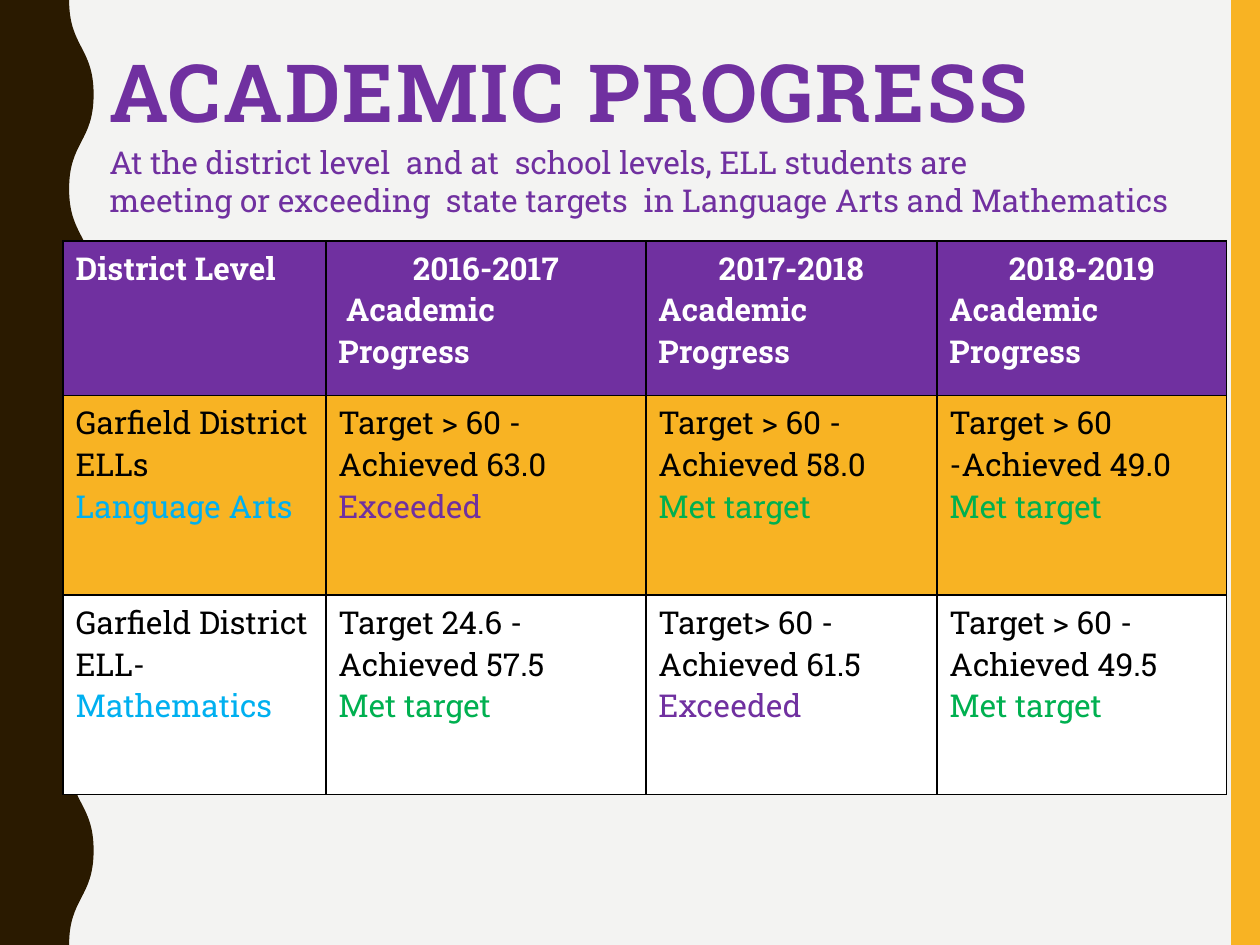
from lxml import etree
from pptx import Presentation
from pptx import util as u
from pptx.dml.color import RGBColor
from pptx.enum import shapes, text
from pptx.oxml import ns

PURPLE, GOLD, BROWN = "7030A0", "F8B323", "2A1A00"
BLUE, GREEN, BLACK, WHITE = "00B0F0", "00B050", "000000", "FFFFFF"


def color(hex_value):
    return RGBColor.from_string(hex_value)


def paint(target, hex_value):
    target.fill.solid()
    target.fill.fore_color.rgb = color(hex_value)


class SlideWriter:
    """Holds the style and the current slide."""

    font_name = "Roboto Slab"
    text_size = 18

    def __init__(self, deck):
        self.slide = deck.slides.add_slide(deck.slide_layouts[5])
        paint(self.slide.background, "F3F3F2")

    def style(self, paragraph, hex_value, size=text_size, bold=False):
        font = paragraph.font
        font.name, font.size, font.bold = self.font_name, u.Pt(size), bold
        font.color.rgb = color(hex_value)

    def finish(self, shape, hex_value):
        shape.shadow.inherit = False
        paint(shape, hex_value)
        shape.line.fill.background()

    def band(self, box, hex_value):
        bar = self.slide.shapes.add_shape(
            shapes.MSO_SHAPE.RECTANGLE, *map(u.Pt, box))
        self.finish(bar, hex_value)

    def wavy_edge(self, near, far, height, half_waves, hex_value):
        near, far, height = u.Pt(near), u.Pt(far), u.Pt(height)
        half = height // half_waves
        turns = [(far if i % 2 else near, i * half)
                 for i in range(half_waves + 1)]
        builder = self.slide.shapes.build_freeform(*turns[0])
        builder.add_line_segments(turns[1:] + [(0, height), (0, 0)], close=True)
        edge = builder.convert_to_shape()
        self.finish(edge, hex_value)
        # Turn the lines between turning points into S-curves
        lines = list(edge._element.iter(ns.qn("a:lnTo")))[:half_waves]
        for line, (x0, y0), (x1, y1) in zip(lines, turns, turns[1:]):
            middle = (y0 + y1) // 2
            curve = etree.Element(ns.qn("a:cubicBezTo"))
            for x, y in ((x0, middle), (x1, middle), (x1, y1)):
                etree.SubElement(curve, ns.qn("a:pt"), x=str(x), y=str(y))
            line.getparent().replace(line, curve)

    def title(self, words, box, size, hex_value):
        heading = self.slide.shapes.title
        heading.left, heading.top, heading.width, heading.height = map(u.Pt, box)
        frame = heading.text_frame
        frame.text = words
        frame.auto_size = text.MSO_AUTO_SIZE.NONE
        frame.vertical_anchor = text.MSO_ANCHOR.TOP
        line = frame.paragraphs[0]
        line.alignment, line.line_spacing = text.PP_ALIGN.LEFT, 0.9
        self.style(line, hex_value, size, bold=True)
        # Letter spacing in hundredths of a point
        line.runs[0].font._element.set("spc", "150")

    def text_box(self, lines, box, hex_value):
        frame = self.slide.shapes.add_textbox(*map(u.Pt, box)).text_frame
        frame.word_wrap = True
        frame.text = "\n".join(lines)
        for line in frame.paragraphs:
            self.style(line, hex_value)

    def cell(self, cell, lines, fill, bold=False):
        """Fill one cell; each line is (words, colour, alignment)."""
        paint(cell, fill)
        cell.text = "\n".join(words for words, _, _ in lines)
        for line, (_, hex_value, align) in zip(cell.text_frame.paragraphs, lines):
            line.alignment = align
            self.style(line, hex_value, bold=bold)
        # Black 1 pt borders go before the fill in the cell properties
        props = cell._tc.get_or_add_tcPr()
        for i, side in enumerate(("a:lnL", "a:lnR", "a:lnT", "a:lnB")):
            border = etree.Element(ns.qn(side), w=str(u.Pt(1)))
            solid = etree.SubElement(border, ns.qn("a:solidFill"))
            etree.SubElement(solid, ns.qn("a:srgbClr"), val=BLACK)
            props.insert(i, border)

    def table(self, rows, left, top, widths, heights, fills):
        grid = self.slide.shapes.add_table(
            len(rows), len(widths), u.Pt(left), u.Pt(top),
            u.Pt(sum(widths)), u.Pt(sum(heights))).table
        for column, width in zip(grid.columns, widths):
            column.width = u.Pt(width)
        for r, (row, height, fill) in enumerate(zip(rows, heights, fills)):
            grid.rows[r].height = u.Pt(height)
            for c, lines in enumerate(row):
                self.cell(grid.cell(r, c), lines, fill, bold=r == 0)


def header(label, year=None):
    lines = [(year, WHITE, text.PP_ALIGN.CENTER)] if year else []
    return lines + [(label, WHITE, text.PP_ALIGN.LEFT)]


def entry(*lines):
    """Body cell: black lines, then a last line coloured by its meaning."""
    accents = {"Exceeded": PURPLE, "Met target": GREEN}
    last = len(lines) - 1
    return [(words, accents.get(words, BLUE) if i == last else BLACK,
             text.PP_ALIGN.LEFT) for i, words in enumerate(lines)]


def main():
    deck = Presentation()
    deck.slide_width, deck.slide_height = u.Pt(720), u.Pt(540)
    page = SlideWriter(deck)

    # Side decoration
    page.band((703.5, 0, 16.5, 540), GOLD)
    page.wavy_edge(39.5, 53.5, 540, 10, BROWN)

    # Heading
    page.title("ACADEMIC PROGRESS", (55.4, 26.6, 646, 83), 45.9, PURPLE)

    # District results
    results = [
        [header("District Level"),
         header(" Academic Progress ", "2016-2017"),
         header("Academic Progress", "2017-2018"),
         header("Academic Progress", "2018-2019")],
        [entry("Garfield District ELLs", "Language Arts"),
         entry("Target > 60 -", "Achieved 63.0", "Exceeded"),
         entry("Target > 60 -", "Achieved 58.0", "Met target"),
         entry("Target > 60 -Achieved 49.0", "Met target")],
        [entry("Garfield District ELL-", "Mathematics"),
         entry("Target 24.6 -", "Achieved 57.5", "Met target"),
         entry("Target> 60 -", "Achieved 61.5", "Exceeded"),
         entry("Target > 60 - Achieved 49.5", "Met target")],
    ]
    page.table(results, 36, 137.7, (150.2, 182.9, 166.3, 165.6),
               (88.4, 114, 114), (PURPLE, GOLD, WHITE))

    # Summary under the heading
    page.text_box(
        ("At the district level  and at  school levels, ELL students are",
         "meeting or exceeding  state targets  in Language Arts and Mathematics"),
        (55.4, 78, 658, 51), PURPLE)

    deck.save("out.pptx")


if __name__ == "__main__":
    main()
